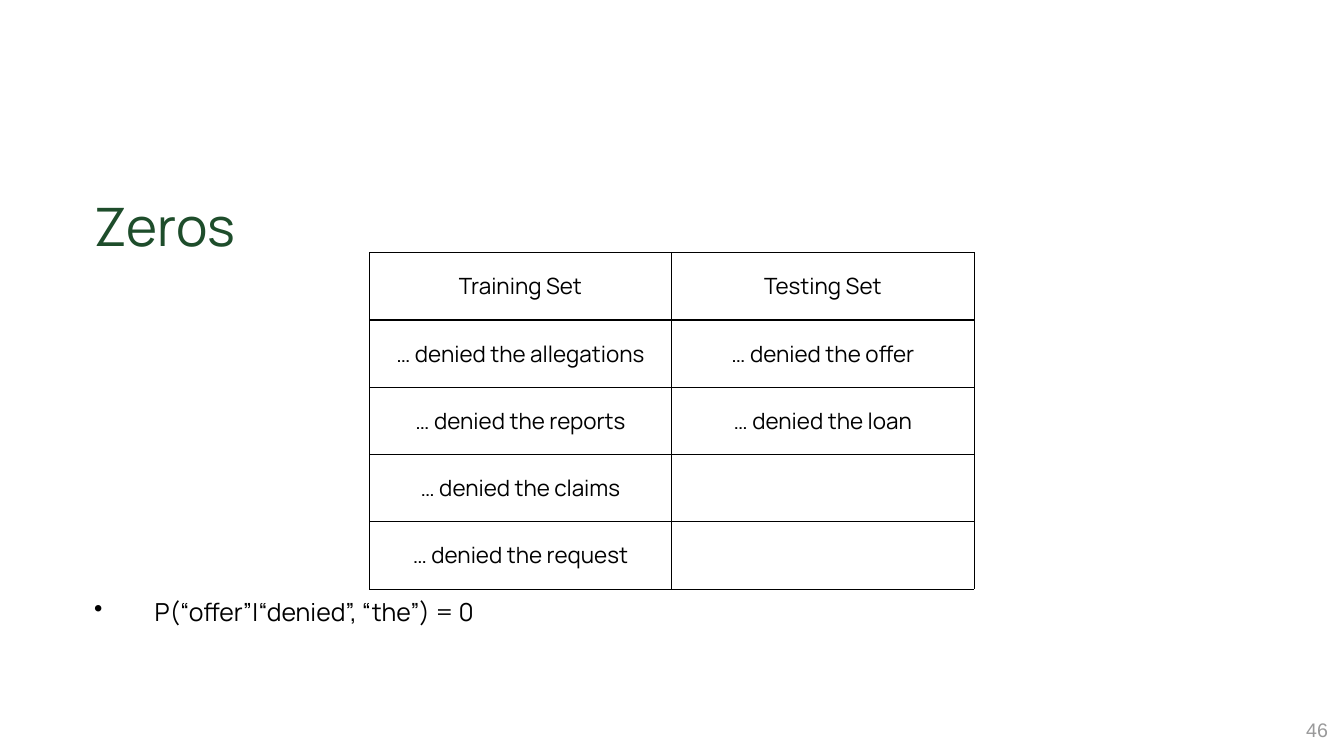
from dataclasses import dataclass

from lxml import etree
from pptx import Presentation
from pptx.dml.color import RGBColor
from pptx.enum.text import MSO_ANCHOR, PP_ALIGN
from pptx.oxml.ns import qn
from pptx.util import Inches, Pt

LEFT, CENTER, RIGHT = PP_ALIGN.LEFT, PP_ALIGN.CENTER, PP_ALIGN.RIGHT
TOP, MIDDLE = MSO_ANCHOR.TOP, MSO_ANCHOR.MIDDLE


@dataclass(frozen=True)
class Theme:
    font: str = "Manrope"
    number_font: str = "Arial"
    title_color: str = "1E4D2B"
    text_color: str = "000000"
    number_color: str = "99999A"
    title_size: float = 75.7
    body_size: float = 35.5
    table_size: float = 32
    number_size: float = 28
    thin_line: float = 1
    header_line: float = 3


class SlideBuilder:
    """Draws styled elements on a slide divided into 100 columns and 100 rows."""

    def __init__(self, presentation, theme):
        self.theme = theme
        self.slide = presentation.slides.add_slide(presentation.slide_layouts[6])
        self.column = presentation.slide_width / 100
        self.row = presentation.slide_height / 100

    def place(self, left, top, width, height):
        return (round(left * self.column), round(top * self.row),
                round(width * self.column), round(height * self.row))

    def style(self, paragraph, size, color, font=None, align=LEFT):
        paragraph.alignment = align
        paragraph.font.name = font or self.theme.font
        paragraph.font.size = Pt(size)
        paragraph.font.color.rgb = RGBColor.from_string(color)

    def text(self, text, area, size, color, font=None, align=LEFT,
             anchor=TOP, inset=0.1, wrap=True):
        frame = self.slide.shapes.add_textbox(*self.place(*area)).text_frame
        frame.word_wrap = wrap
        frame.vertical_anchor = anchor
        frame.margin_left = frame.margin_right = Inches(inset)
        frame.margin_top = frame.margin_bottom = Inches(inset)
        paragraph = frame.paragraphs[0]
        paragraph.text = text
        self.style(paragraph, size, color, font, align)
        return paragraph

    def bullet(self, text, area, indent=1.2):
        paragraph = self.text(text, area, self.theme.body_size, self.theme.text_color)
        paragraph.line_spacing = 0.9
        properties = paragraph._p.get_or_add_pPr()
        properties.set("marL", str(Inches(indent)))
        properties.set("indent", str(-Inches(indent)))
        mark = etree.Element(qn("a:buChar"), char="•")
        properties.find(qn("a:defRPr")).addprevious(mark)

    def border(self, cell, side, width):
        properties = cell._tc.get_or_add_tcPr()
        line = etree.SubElement(properties, qn(f"a:ln{side}"), w=str(Pt(width)))
        fill = etree.SubElement(line, qn("a:solidFill"))
        etree.SubElement(fill, qn("a:srgbClr"), val=self.theme.text_color)

    def table(self, rows, left, top, column_width, row_height):
        theme = self.theme
        area = (left, top, column_width * len(rows[0]), row_height * len(rows))
        table = self.slide.shapes.add_table(
            len(rows), len(rows[0]), *self.place(*area)).table
        table.first_row = table.horz_banding = False
        for row_index, row in enumerate(rows):
            for column_index, text in enumerate(row):
                cell = table.cell(row_index, column_index)
                cell.text = text
                cell.vertical_anchor = MIDDLE
                cell.margin_left = cell.margin_right = Inches(0.06)
                cell.margin_top = cell.margin_bottom = Inches(0.06)
                self.style(cell.text_frame.paragraphs[0], theme.table_size,
                           theme.text_color, align=CENTER)
                above = theme.header_line if row_index == 1 else theme.thin_line
                below = theme.header_line if row_index == 0 else theme.thin_line
                for side, width in (("L", theme.thin_line), ("R", theme.thin_line),
                                    ("T", above), ("B", below)):
                    self.border(cell, side, width)
                cell.fill.background()


def main():
    presentation = Presentation()
    presentation.slide_width, presentation.slide_height = Inches(26.67), Inches(15)
    theme = Theme()
    builder = SlideBuilder(presentation, theme)

    builder.text("Zeros", (6.64, 24.87, 89.69, 11.2),
                 theme.title_size, theme.title_color)
    builder.bullet("P(“offer”|“denied”, “the”) = 0", (6.64, 78.67, 89.69, 12.13))
    builder.text("46", (96.93, 94.8, 2.06, 3.53), theme.number_size,
                 theme.number_color, theme.number_font, RIGHT, MIDDLE, 0.05, False)
    builder.table([
        ("Training Set", "Testing Set"),
        ("… denied the allegations", "… denied the offer"),
        ("… denied the reports", "… denied the loan"),
        ("… denied the claims", ""),
        ("… denied the request", ""),
    ], left=27.48, top=33.4, column_width=22.5, row_height=8.9)

    presentation.save("out.pptx")


if __name__ == "__main__":
    main()
